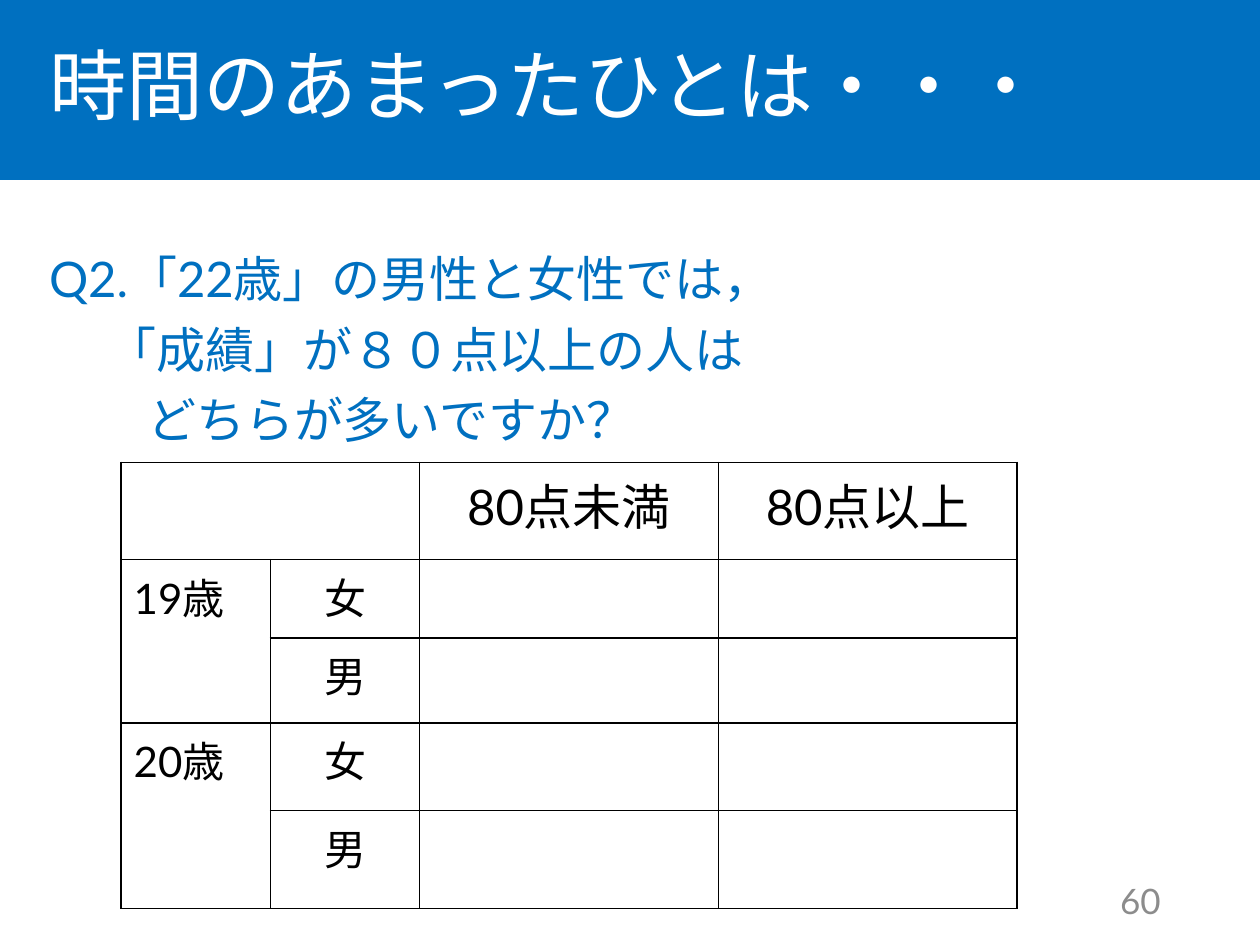
from lxml.etree import SubElement
from pptx import Presentation
from pptx.dml.color import RGBColor
from pptx.enum.shapes import MSO_SHAPE as Shape
from pptx.enum.text import MSO_ANCHOR as Anchor, PP_ALIGN as Align
from pptx.oxml.ns import qn
from pptx.util import Cm, Pt

BLUE = RGBColor(0x00, 0x70, 0xC0)
WHITE = RGBColor(0xFF, 0xFF, 0xFF)
BLACK = RGBColor(0x00, 0x00, 0x00)
GRAY = RGBColor(0x8C, 0x8C, 0x8C)


def write(frame, lines, size, color, align=Align.LEFT, anchor=Anchor.TOP,
          spacing=1.0, indents=()):
    """Fill a text frame with one paragraph per line."""
    frame.word_wrap = True
    frame.vertical_anchor = anchor
    for i, line in enumerate(lines):
        paragraph = frame.paragraphs[0] if i == 0 else frame.add_paragraph()
        paragraph.alignment = align
        paragraph.line_spacing = spacing
        if indents:
            properties = paragraph._p.get_or_add_pPr()
            properties.set("marL", str(Cm(indents[i])))
            properties.set("indent", "0")
        run = paragraph.add_run()
        run.text = line
        run.font.name = "Lato"
        run.font.size = Pt(size)
        run.font.color.rgb = color


def outline(cell):
    """Give a cell no fill and a thin black line on each side."""
    cell.fill.background()
    properties = cell._tc.get_or_add_tcPr()
    for i, side in enumerate(("a:lnL", "a:lnR", "a:lnT", "a:lnB")):
        line = SubElement(properties, qn(side), w=str(Pt(1)))
        fill = SubElement(line, qn("a:solidFill"))
        SubElement(fill, qn("a:srgbClr"), val=str(BLACK))
        properties.insert(i, line)


deck = Presentation()
deck.slide_width, deck.slide_height = Cm(25.4), Cm(19.05)
slide = deck.slides.add_slide(deck.slide_layouts[6])
shapes = slide.shapes

# Title band
band = shapes.add_shape(Shape.RECTANGLE, 0, 0, deck.slide_width, Cm(3.63))
band.shadow.inherit = False
band.fill.solid()
band.fill.fore_color.rgb = BLUE
band.line.fill.background()

# Title
title = shapes.add_textbox(Cm(0.74), Cm(0.5), Cm(23.72), Cm(2.62))
write(title.text_frame, ["時間のあまったひとは・・・"], 44, WHITE,
      anchor=Anchor.MIDDLE, spacing=0.9)

# Question
question = shapes.add_textbox(Cm(0.74), Cm(4.65), Cm(23.72), Cm(4.65))
write(question.text_frame,
      ["Q2.「22歳」の男性と女性では，",
       "「成績」が８０点以上の人は",
       "どちらが多いですか？"],
      28, BLUE, spacing=1.2, indents=(0, 1.18, 1.98))

# Answer table: age and sex against score
widths = [3.01, 3.01, 6.02, 6.02]
heights = [1.96, 1.58, 1.71, 1.77, 1.97]
answers = shapes.add_table(len(heights), len(widths), Cm(2.44), Cm(9.32),
                           Cm(sum(widths)), Cm(sum(heights))).table
answers.first_row = answers.horz_banding = False
for column, width in zip(answers.columns, widths):
    column.width = Cm(width)
for row, height in zip(answers.rows, heights):
    row.height = Cm(height)
for cell in answers.iter_cells():
    outline(cell)

# Score headings
answers.cell(0, 0).merge(answers.cell(0, 1))
for col, score in enumerate(("80点未満", "80点以上"), start=2):
    write(answers.cell(0, col).text_frame, [score], 28, BLACK, Align.CENTER)

# Two rows for each age
for top, age in ((1, "19歳"), (3, "20歳")):
    answers.cell(top, 0).merge(answers.cell(top + 1, 0))
    write(answers.cell(top, 0).text_frame, [age], 24, BLACK)
    for row, sex in enumerate(("女", "男"), start=top):
        write(answers.cell(row, 1).text_frame, [sex], 24, BLACK, Align.CENTER)

# Page number
page = shapes.add_textbox(Cm(21.36), Cm(17.65), Cm(2.29), Cm(1.02))
write(page.text_frame, ["60"], 20, GRAY, Align.RIGHT, Anchor.MIDDLE)

deck.save("out.pptx")
